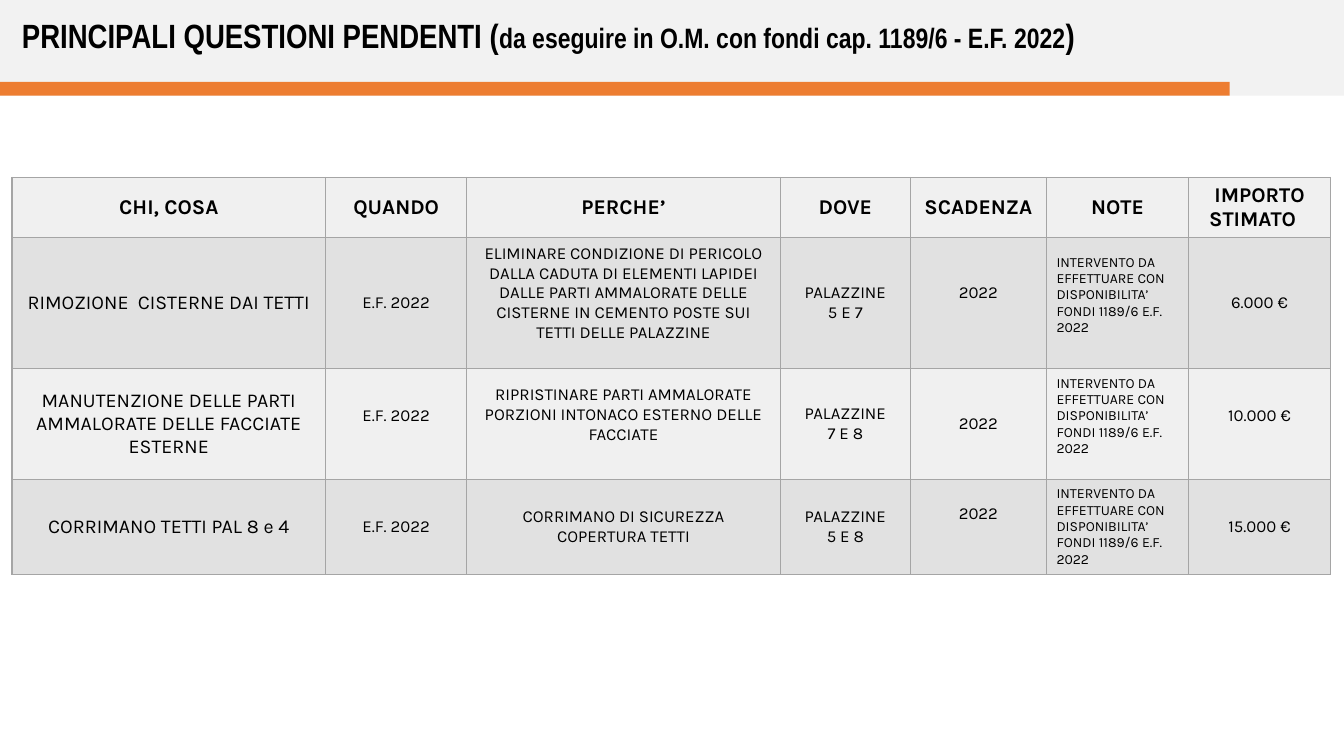
from pptx import Presentation
from pptx.dml.color import RGBColor
from pptx.enum.shapes import MSO_SHAPE
from pptx.enum.text import MSO_ANCHOR, MSO_AUTO_SIZE, PP_ALIGN
from pptx.oxml import parse_xml
from pptx.oxml.ns import nsdecls
from pptx.util import Pt

BLACK = RGBColor(0x00, 0x00, 0x00)
BAND = RGBColor(0xF2, 0xF2, 0xF2)
ORANGE = RGBColor(0xED, 0x7D, 0x31)
LIGHT = RGBColor(0xF0, 0xF0, 0xF0)
DARK = RGBColor(0xE1, 0xE1, 0xE1)
RULE = RGBColor(0xA5, 0xA5, 0xA5)

COLS = [224, 100.8, 224, 92.9, 97.2, 101.5, 101.5]
ROWS = [42.9, 93.6, 79.2, 67.8]
SIZES = [14, 12, 12, 12, 12, 10, 12]
NOTE_COL = 5
NOTE = "INTERVENTO DA EFFETTUARE CON DISPONIBILITA’ FONDI 1189/6 E.F. 2022"

TITLE = [
    ("PRINCIPALI QUESTIONI PENDENTI (", 24),
    ("da eseguire in O.M. con fondi cap. 1189/6 - E.F. 2022", 20),
    (")", 24),
]
HEAD = ["CHI, COSA", "QUANDO", "PERCHE’", "DOVE", "SCADENZA", "NOTE",
        "IMPORTO STIMATO\t"]
WORKS = [
    ["RIMOZIONE  CISTERNE DAI TETTI", "E.F. 2022",
     "ELIMINARE CONDIZIONE DI PERICOLO DALLA CADUTA DI ELEMENTI LAPIDEI "
     "DALLE PARTI AMMALORATE DELLE CISTERNE IN CEMENTO POSTE SUI TETTI "
     "DELLE PALAZZINE",
     "PALAZZINE\n5 E 7", "2022", NOTE, "6.000 €"],
    ["MANUTENZIONE DELLE PARTI AMMALORATE DELLE FACCIATE ESTERNE",
     "E.F. 2022",
     "RIPRISTINARE PARTI AMMALORATE PORZIONI INTONACO ESTERNO DELLE FACCIATE",
     "PALAZZINE\n7 E 8", "2022", NOTE, "10.000 €"],
    ["CORRIMANO TETTI PAL 8 e 4", "E.F. 2022",
     "CORRIMANO DI SICUREZZA COPERTURA TETTI",
     "PALAZZINE\n5 E 8", "2022", NOTE, "15.000 €"],
]
# Extra bottom margin for cells whose text sits above the middle: (row, col)
LIFT = {(1, 2): 14, (1, 4): 15, (1, 5): 11, (2, 1): 12, (2, 2): 13,
        (2, 5): 11, (2, 6): 12, (3, 4): 18}


def add_bar(slide, top, width, height, color):
    bar = slide.shapes.add_shape(MSO_SHAPE.RECTANGLE, 0, Pt(top),
                                 Pt(width), Pt(height))
    bar.shadow.inherit = False
    bar.fill.solid()
    bar.fill.fore_color.rgb = color
    bar.line.fill.background()


def add_run(para, text, size, face, bold):
    run = para.add_run()
    run.text = text
    font = run.font
    font.size, font.name, font.bold = Pt(size), face, bold
    font.color.rgb = BLACK


def add_title(slide):
    box = slide.shapes.add_textbox(Pt(8.6), Pt(7.2), Pt(862), Pt(36))
    frame = box.text_frame
    frame.word_wrap = True
    frame.auto_size = MSO_AUTO_SIZE.SHAPE_TO_FIT_TEXT
    for text, size in TITLE:
        add_run(frame.paragraphs[0], text, size, "Arial Narrow", True)


def add_edges(cell):
    props = cell._tc.get_or_add_tcPr()
    for index, side in enumerate(("lnL", "lnR", "lnT", "lnB")):
        props.insert(index, parse_xml(
            f'<a:{side} {nsdecls("a")} w="{Pt(1)}"><a:solidFill>'
            f'<a:srgbClr val="{RULE}"/></a:solidFill></a:{side}>'))


def fill_cell(cell, text, size, bold, align, color, lift):
    cell.fill.solid()
    cell.fill.fore_color.rgb = color
    add_edges(cell)
    cell.vertical_anchor = MSO_ANCHOR.MIDDLE
    cell.margin_bottom = Pt(3.6 + lift)
    frame = cell.text_frame
    for index, line in enumerate(text.split("\n")):
        para = frame.add_paragraph() if index else frame.paragraphs[0]
        para.alignment = align
        add_run(para, line, size, "Karla", bold)


def add_grid(slide):
    table = slide.shapes.add_table(len(ROWS), len(COLS), Pt(8.6), Pt(126.7),
                                   Pt(sum(COLS)), Pt(sum(ROWS))).table
    table.first_row = table.horz_banding = False
    for col, width in zip(table.columns, COLS):
        col.width = Pt(width)
    for row, height in zip(table.rows, ROWS):
        row.height = Pt(height)
    for r, texts in enumerate([HEAD] + WORKS):
        for c, text in enumerate(texts):
            head = r == 0
            left = c == NOTE_COL and not head
            fill_cell(table.cell(r, c), text, 15 if head else SIZES[c], head,
                      PP_ALIGN.LEFT if left else PP_ALIGN.CENTER,
                      DARK if r % 2 else LIGHT, LIFT.get((r, c), 0))


def main():
    deck = Presentation()
    deck.slide_width, deck.slide_height = Pt(960), Pt(540)
    slide = deck.slides.add_slide(deck.slide_layouts[6])
    # Heading band and accent bar
    add_bar(slide, 0, 960, 68.4, BAND)
    add_bar(slide, 58.4, 878.4, 10, ORANGE)
    # Table of works, then the title
    add_grid(slide)
    add_title(slide)
    deck.save("out.pptx")


if __name__ == "__main__":
    main()
